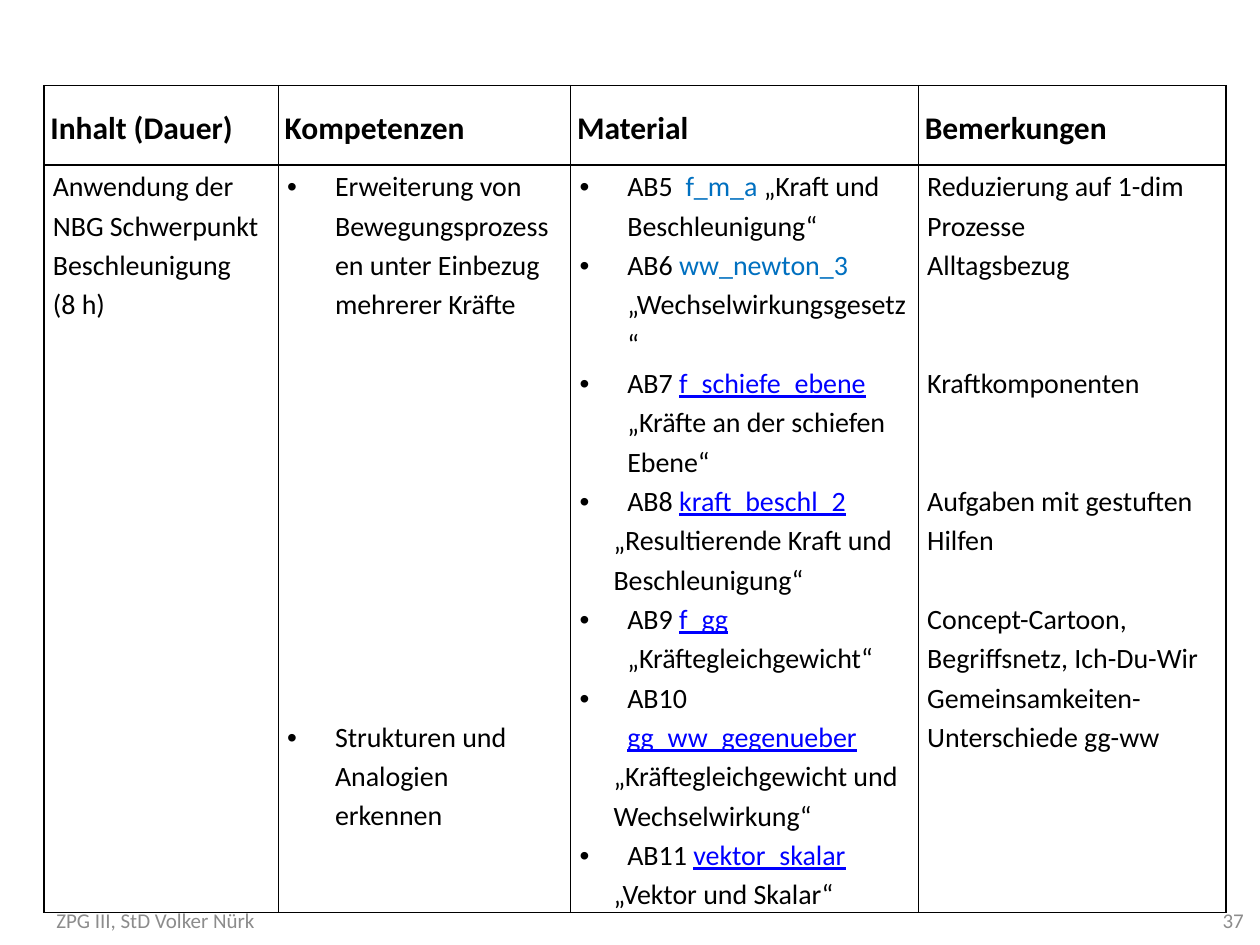
from lxml import etree
from pptx import Presentation
from pptx.dml import color as dml
from pptx.enum import text
from pptx.oxml import ns
from pptx.util import Inches, Pt

BLACK, BLUE, LINK, GREY, WHITE = "000000", "0070C0", "0000FF", "8C8C8C", "FFFFFF"
LINE_HEIGHT = 22.46
COLUMN_WIDTHS = (1.86, 2.32, 2.76, 2.44)
ROW_HEIGHTS = (0.63, 5.83)
HEADINGS = ("Inhalt (Dauer)", "Kompetenzen", "Material", "Bemerkungen")

CONTENT = ["Anwendung der NBG Schwerpunkt Beschleunigung", "(8 h)"]
SKILLS = [
    ("Erweiterung von Bewegungsprozessen unter Einbezug mehrerer Kräfte", 0),
    ("Strukturen und Analogien erkennen", 10),
]
MATERIALS = [
    ("AB5  ", "f_m_a ", BLUE, "„Kraft und Beschleunigung“", False),
    ("AB6 ", "ww_newton_3 ", BLUE, "„Wechselwirkungsgesetz“", False),
    ("AB7 ", "f_schiefe_ebene", LINK, " „Kräfte an der schiefen Ebene“", False),
    ("AB8 ", "kraft_beschl_2", LINK, "„Resultierende Kraft und Beschleunigung“", True),
    ("AB9 ", "f_gg", LINK, " „Kräftegleichgewicht“", False),
    ("AB10 ", "gg_ww_gegenueber", LINK, "„Kräftegleichgewicht und Wechselwirkung“", True),
    ("AB11 ", "vektor_skalar", LINK, "„Vektor und Skalar“", True),
]
REMARKS = [
    ("Reduzierung auf 1-dim Prozesse", 0),
    ("Alltagsbezug", 0),
    ("Kraftkomponenten", 2),
    ("Aufgaben mit gestuften Hilfen", 2),
    ("Concept-Cartoon, Begriffsnetz, Ich-Du-Wir", 1),
    ("Gemeinsamkeiten-Unterschiede gg-ww", 0),
]


def rgb(value):
    """Turn a hex string into a colour."""
    return dml.RGBColor.from_string(value)


def add_run(paragraph, content, size=16, color=BLACK, bold=False, underline=False):
    """Append formatted text to a paragraph."""
    run = paragraph.add_run()
    run.text = content
    font = run.font
    font.name, font.size, font.bold, font.underline = "Calibri", Pt(size), bold, underline
    font.color.rgb = rgb(color)


def next_paragraph(frame, lines_before=0, bullet=False, indent=0):
    """Return a fresh table paragraph with its spacing, indent and bullet."""
    paragraph = frame.paragraphs[0]
    if paragraph.runs:
        paragraph = frame.add_paragraph()
    paragraph.line_spacing = 1.15
    paragraph.space_before = Pt(lines_before * LINE_HEIGHT)
    properties = paragraph._p.get_or_add_pPr()
    left = 0.38 if bullet else indent
    properties.set("marL", str(Inches(left)))
    properties.set("indent", str(Inches(-left if bullet else 0)))
    if bullet:
        etree.SubElement(properties, ns.qn("a:buFont")).set("typeface", "Arial")
        etree.SubElement(properties, ns.qn("a:buChar")).set("char", "•")
    return paragraph


def format_cell(cell, side_margin):
    """Give a cell its margins, black borders and white fill."""
    cell.margin_left = cell.margin_right = Inches(side_margin)
    cell.margin_top = cell.margin_bottom = 0
    properties = cell._tc.get_or_add_tcPr()
    for side in "LRTB":
        border = etree.SubElement(properties, ns.qn(f"a:ln{side}"), w=str(Pt(1)))
        fill = etree.SubElement(border, ns.qn("a:solidFill"))
        etree.SubElement(fill, ns.qn("a:srgbClr"), val=BLACK)
    cell.fill.solid()
    cell.fill.fore_color.rgb = rgb(WHITE)


def fill_materials(frame):
    """List the worksheets with their file names and titles."""
    for sheet, file_name, color, title, own_line in MATERIALS:
        paragraph = next_paragraph(frame, bullet=True)
        add_run(paragraph, sheet)
        add_run(paragraph, file_name, color=color, underline=color == LINK)
        if own_line:
            paragraph = next_paragraph(frame, indent=0.27)
        add_run(paragraph, title)


def add_plan_table(slide, left, top):
    """Place the lesson plan table."""
    shape = slide.shapes.add_table(
        2, len(HEADINGS), Inches(left), Inches(top),
        Inches(sum(COLUMN_WIDTHS)), Inches(sum(ROW_HEIGHTS)))
    table = shape.table
    table.first_row = table.horz_banding = False
    for column, width in zip(table.columns, COLUMN_WIDTHS):
        column.width = Inches(width)
    for row, height in zip(table.rows, ROW_HEIGHTS):
        row.height = Inches(height)
    for index, heading in enumerate(HEADINGS):
        header = table.cell(0, index)
        format_cell(header, 0.05)
        header.vertical_anchor = text.MSO_ANCHOR.MIDDLE
        add_run(next_paragraph(header.text_frame), heading, size=18, bold=True)
        format_cell(table.cell(1, index), 0.07)
    content, skills, materials, remarks = (cell.text_frame for cell in table.rows[1].cells)
    for line in CONTENT:
        add_run(next_paragraph(content), line)
    for skill, gap in SKILLS:
        add_run(next_paragraph(skills, gap, bullet=True), skill)
    fill_materials(materials)
    for remark, gap in REMARKS:
        add_run(next_paragraph(remarks, gap), remark)


def add_footer(slide, content, left, top, width, height, alignment):
    """Place one grey footer text."""
    box = slide.shapes.add_textbox(Inches(left), Inches(top), Inches(width), Inches(height))
    frame = box.text_frame
    frame.word_wrap = True
    frame.vertical_anchor = text.MSO_ANCHOR.MIDDLE
    paragraph = frame.paragraphs[0]
    paragraph.alignment = alignment
    add_run(paragraph, content, size=12, color=GREY)


def main():
    """Build and save the slide."""
    presentation = Presentation()
    presentation.slide_width, presentation.slide_height = Inches(10), Inches(7.5)
    slide = presentation.slides.add_slide(presentation.slide_layouts[6])
    add_plan_table(slide, 0.35, 0.68)
    add_footer(slide, "ZPG III, StD Volker Nürk", -0.35, 7.1, 3.17, 0.4, text.PP_ALIGN.CENTER)
    add_footer(slide, "37", 7.64, 7.1, 2.33, 0.4, text.PP_ALIGN.RIGHT)
    presentation.save("out.pptx")


if __name__ == "__main__":
    main()
